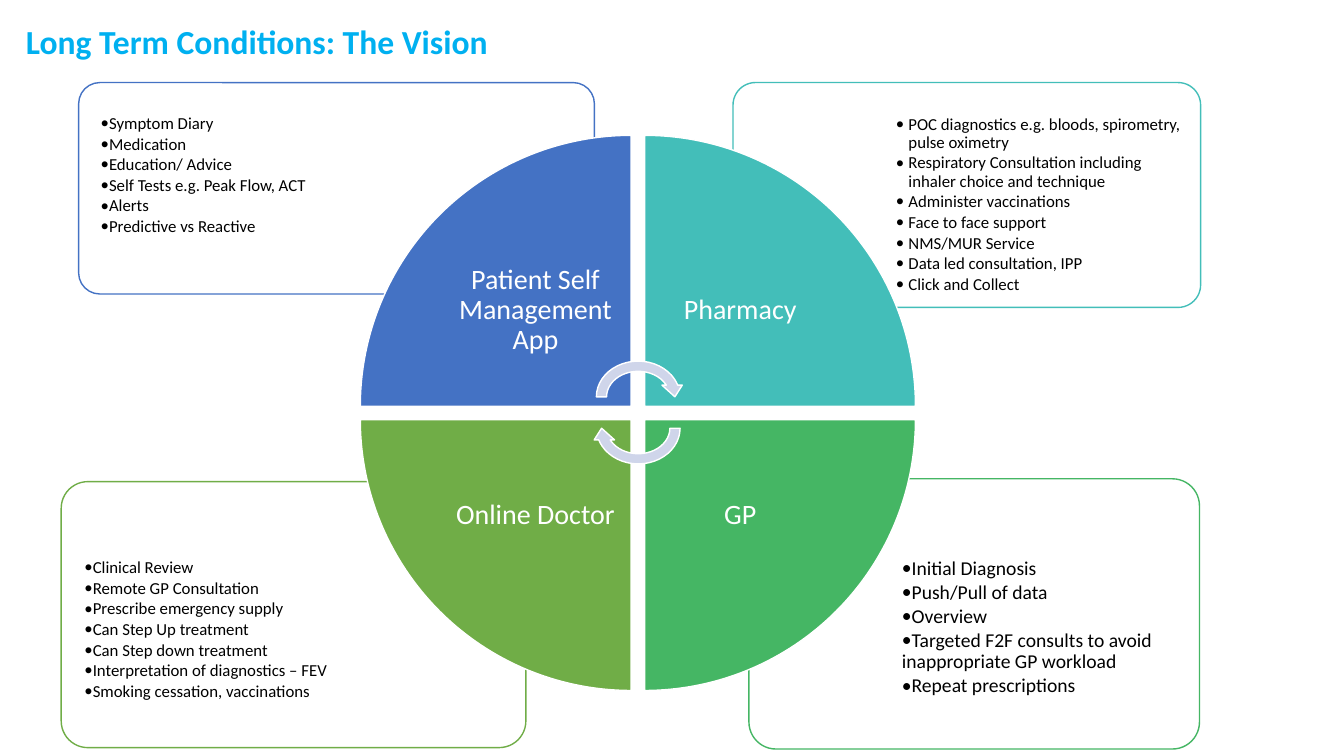
"""Build the long term conditions vision slide: a four-part wheel with detail boxes."""
from lxml.etree import SubElement
from pptx import Presentation
from pptx.dml.color import RGBColor
from pptx.enum.shapes import MSO_SHAPE
from pptx.enum.text import MSO_ANCHOR, MSO_AUTO_SIZE, PP_ALIGN
from pptx.oxml.ns import qn
from pptx.util import Pt

COLORS = {
    "title": "00B0F0", "text": "000000", "white": "FFFFFF", "arrow": "CFD5EA",
    "app": "4472C4", "pharmacy": "43BEB9", "gp": "45B664", "doctor": "70AD47",
}
WHEEL_X, WHEEL_Y, WEDGE, STEP, LABEL = 257.4, 96.7, 193.5, 203, 136.8

# colour, box, text area, font size, inset, level, left margin, indent, bullets
details = [
    ("gp", (535, 342, 321.8, 193), (635.5, 394.6, 216.7, 136.8), 14, 4.2, 1, 4.5, 0,
     ["Initial Diagnosis", "Push/Pull of data", "Overview",
      "Targeted F2F consults to avoid inappropriate GP workload",
      "Repeat prescriptions"]),
    ("doctor", (43.7, 344, 331.9, 190), (47.7, 395.8, 223.9, 133.9), 12, 3.6, 1, 9, 0,
     ["Clinical Review", "Remote GP Consultation", "Prescribe emergency supply",
      "Can Step Up treatment", "Can Step down treatment",
      "Interpretation of diagnostics – FEV", "Smoking cessation, vaccinations"]),
    ("pharmacy", (523.6, 59, 334, 160.6), (627.3, 79.1, 226.8, 137), 12, 3.6, 2, 18, -9,
     ["POC diagnostics e.g. bloods, spirometry, pulse oximetry",
      "Respiratory Consultation including inhaler choice and technique",
      "Administer vaccinations", "Face to face support", "NMS/MUR Service",
      "Data led consultation, IPP", "Click and Collect"]),
    ("app", (56.2, 59, 368.4, 151), (59.3, 78.5, 251.3, 98), 12, 3.6, 1, 9, 0,
     ["Symptom Diary", "Medication", "Education/ Advice",
      "Self Tests e.g. Peak Flow, ACT", "Alerts", "Predictive vs Reactive"]),
]

# colour, label, column, row, rotation
wedges = [
    ("app", "Patient Self Management App", 0, 0, 0),
    ("pharmacy", "Pharmacy", 1, 0, 90),
    ("gp", "GP", 1, 1, 180),
    ("doctor", "Online Doctor", 0, 1, 270),
]

prs = Presentation()
prs.slide_width, prs.slide_height = Pt(960), Pt(540)
s = prs.slides.add_slide(prs.slide_layouts[5])


def add_shape(kind, box, fill, line, rotation=0):
    sp = s.shapes.add_shape(kind, *map(Pt, box))
    sp.shadow.inherit = False
    sp.rotation = rotation
    sp.fill.solid()
    sp.fill.fore_color.rgb = RGBColor.from_string(COLORS[fill])
    sp.line.color.rgb = RGBColor.from_string(COLORS[line])
    sp.line.width = Pt(1)
    return sp


def add_text(box, lines, size, color, inset):
    tf = s.shapes.add_textbox(*map(Pt, box)).text_frame
    tf.word_wrap = True
    tf.margin_left = tf.margin_right = tf.margin_top = tf.margin_bottom = Pt(inset)
    tf.text = "\n".join(lines)
    for p in tf.paragraphs:
        p.line_spacing = 0.9
        f = p.runs[0].font
        f.name, f.size = "Calibri", Pt(size)
        f.color.rgb = RGBColor.from_string(COLORS[color])
    return tf


title = s.shapes.title
title.left, title.top, title.width, title.height = Pt(11.3), Pt(11.5), Pt(775), Pt(36)
tf = title.text_frame
tf.text = "Long Term Conditions: The Vision"
tf.auto_size = MSO_AUTO_SIZE.NONE
tf.vertical_anchor = MSO_ANCHOR.MIDDLE
p = tf.paragraphs[0]
p.alignment = PP_ALIGN.LEFT
f = p.runs[0].font
f.name, f.size, f.bold = "Calibri", Pt(24), True
f.color.rgb = RGBColor.from_string(COLORS["title"])

for color, box, area, size, inset, level, margin, indent, bullets in details:
    sp = add_shape(MSO_SHAPE.ROUNDED_RECTANGLE, box, "white", color)
    sp.adjustments[0] = 0.1
    tf = add_text(area, bullets, size, "text", inset)
    for p in tf.paragraphs:
        p.level = level
        p.space_after = Pt(size * 0.15)
        pPr = p._p.get_or_add_pPr()
        pPr.set("marL", str(Pt(margin)))
        pPr.set("indent", str(Pt(indent)))
        SubElement(pPr, qn("a:buFont"), typeface="Calibri")
        SubElement(pPr, qn("a:buChar"), char="•")

for color, label, col, row, rotation in wedges:
    x, y = WHEEL_X + col * STEP, WHEEL_Y + row * STEP
    add_shape(MSO_SHAPE.PIE_WEDGE, (x, y, WEDGE, WEDGE), color, "white", rotation)
    inner = WEDGE - LABEL
    area = (x + inner * (1 - col), y + inner * (1 - row), LABEL, LABEL)
    tf = add_text(area, [label], 20, "white", 11)
    tf.vertical_anchor = MSO_ANCHOR.MIDDLE
    tf.paragraphs[0].alignment = PP_ALIGN.CENTER

for top, rotation in ((254.3, 0), (276.7, 180)):
    add_shape(MSO_SHAPE.CIRCULAR_ARROW, (422.4, top, 67, 58.3), "arrow", "white", rotation)

prs.save("out.pptx")
